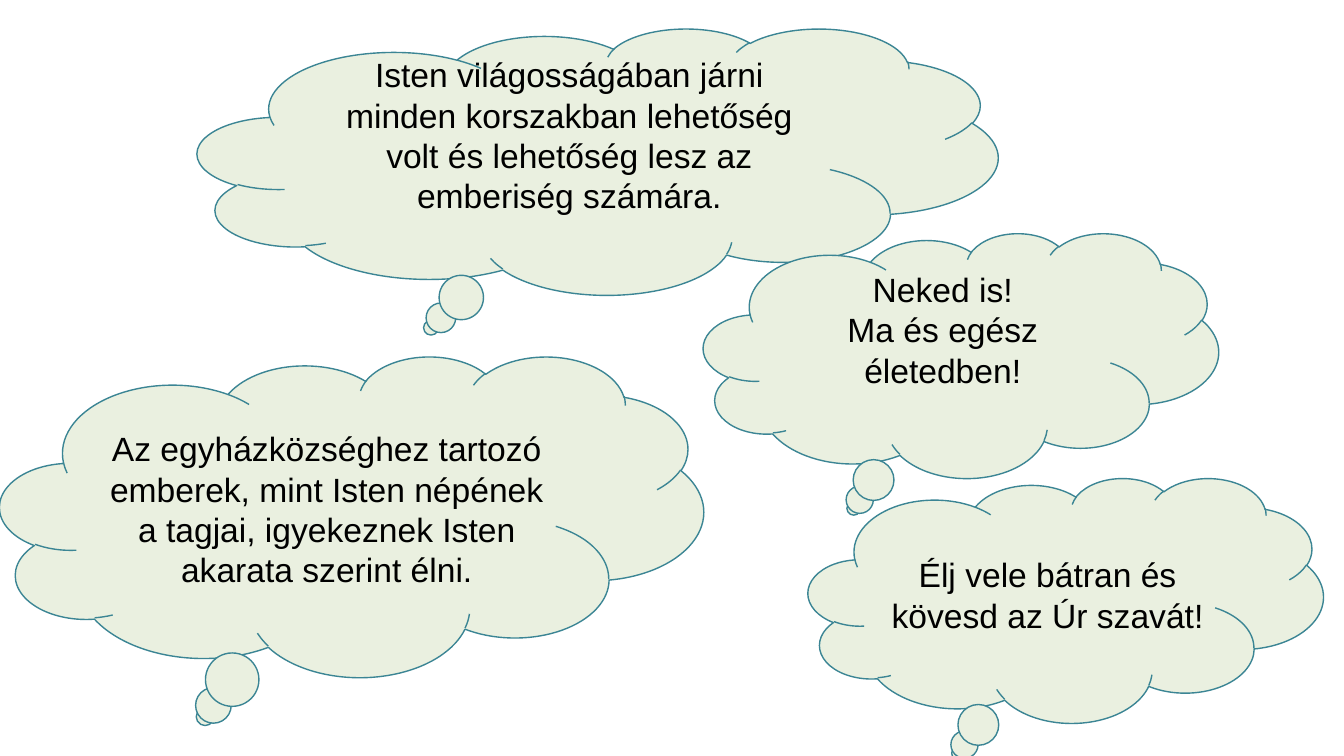
from pptx import Presentation
from pptx import util as u
from pptx.dml.color import RGBColor
from pptx.enum import shapes, text

CLOUD_FILL = RGBColor(0xEA, 0xF0, 0xE0)
CLOUD_LINE = RGBColor(0x3B, 0x85, 0x94)
BLACK = RGBColor(0, 0, 0)

CLOUDS = [
    ((0, 8.97, 17.73, 8.08), 0.13,
     ["Az egyházközséghez tartozó emberek, mint Isten népének a tagjai, "
      "igyekeznek Isten akarata szerint élni."]),
    ((4.98, 0.71, 20.17, 6.71), 1.14,
     ["Isten világosságában járni minden korszakban lehetőség volt és "
      "lehetőség lesz az emberiség számára."]),
    ((17.73, 5.87, 12.98, 6.17), 1.14,
     ["Neked is!", "Ma és egész életedben!"]),
    ((20.37, 12.04, 12.98, 6.17), 0.13,
     ["Élj vele bátran és kövesd az Úr szavát!"]),
]


def add_paragraph(p, content):
    """Write one centred line of thought."""
    p.alignment = text.PP_ALIGN.CENTER
    r = p.add_run()
    r.text = content
    r.font.name = "Arial"
    r.font.size = u.Pt(24)
    r.font.color.rgb = BLACK


def add_cloud(s, box, bottom_inset, lines):
    """Add a thought cloud with its text."""
    sp = s.shapes.add_shape(shapes.MSO_SHAPE.CLOUD_CALLOUT, *map(u.Cm, box))
    sp.shadow.inherit = False
    sp.fill.solid()
    sp.fill.fore_color.rgb = CLOUD_FILL
    sp.line.color.rgb = CLOUD_LINE
    sp.line.width = u.Pt(1)
    tf = sp.text_frame
    tf.word_wrap = True
    tf.vertical_anchor = text.MSO_ANCHOR.MIDDLE
    tf.margin_bottom = u.Cm(bottom_inset)
    for i, line in enumerate(lines):
        add_paragraph(tf.add_paragraph() if i else tf.paragraphs[0], line)


def main():
    """Build the slide of thought clouds."""
    prs = Presentation()
    prs.slide_width, prs.slide_height = u.Cm(33.87), u.Cm(19.05)
    s = prs.slides.add_slide(prs.slide_layouts[6])
    for box, bottom_inset, lines in CLOUDS:
        add_cloud(s, box, bottom_inset, lines)
    prs.save("out.pptx")


if __name__ == "__main__":
    main()
